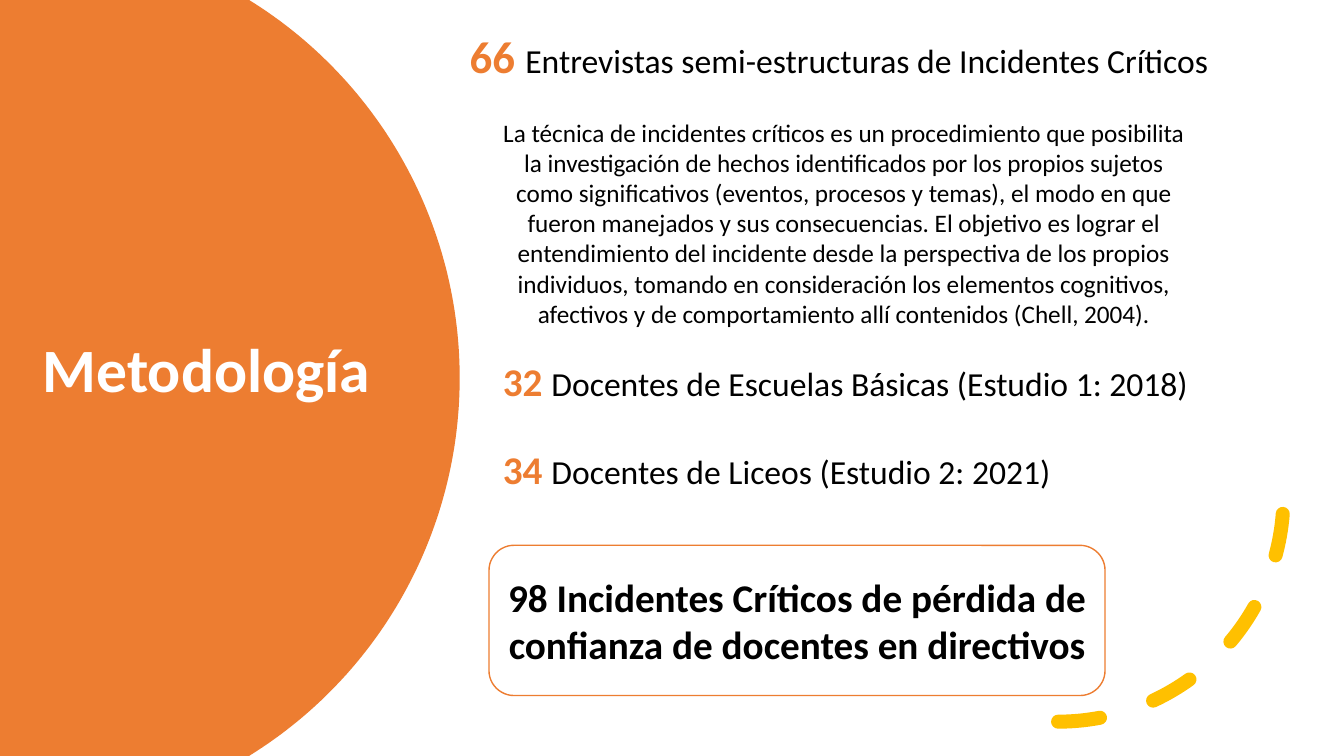
from dataclasses import dataclass
from math import asin, cos, sin

from lxml import etree
from pptx import Presentation
from pptx.dml.color import RGBColor
from pptx.enum.dml import MSO_LINE
from pptx.enum.shapes import MSO_SHAPE
from pptx.enum.text import MSO_ANCHOR, PP_ALIGN
from pptx.oxml.ns import qn
from pptx.shapes.autoshape import Shape
from pptx.slide import Slide
from pptx.util import Pt

PX = 9144  # 100 px to the inch
WIDTH, HEIGHT = 1333, 750
FONT = "Calibri"
COLORS = {"orange": "ED7D31", "gold": "FFC000", "white": "FFFFFF", "black": "000000"}

LEFT, CENTER = PP_ALIGN.LEFT, PP_ALIGN.CENTER
TOP, MIDDLE = MSO_ANCHOR.TOP, MSO_ANCHOR.MIDDLE
ARC, ROUND = MSO_SHAPE.ARC, MSO_SHAPE.ROUNDED_RECTANGLE
DASH = MSO_LINE.DASH

Box = tuple[int, int, int, int]


@dataclass
class Part:
    text: str
    size: int
    color: str = "black"
    bold: bool = False


@dataclass
class Block:
    box: Box
    lines: list[list[Part]]
    align: PP_ALIGN = LEFT
    anchor: MSO_ANCHOR = TOP
    gap: int = 0
    pitch: float = 1.0


def count(number: str, size: int, label: str) -> list[Part]:
    """Give a line that opens with a large orange number."""
    return [Part(f"{number} ", size, "orange", True), Part(label, 24)]


TITLE = Block((30, 126, 350, 488), [[Part("Metodología", 44, "white", True)]],
              CENTER, MIDDLE, pitch=0.9)
METHOD = Block((486, 111, 702, 222), [[Part(
    "La técnica de incidentes críticos es un procedimiento que posibilita la "
    "investigación de hechos identificados por los propios sujetos como "
    "significativos (eventos, procesos y temas), el modo en que fueron manejados "
    "y sus consecuencias. El objetivo es lograr el entendimiento del incidente "
    "desde la perspectiva de los propios individuos, tomando en consideración los "
    "elementos cognitivos, afectivos y de comportamiento allí contenidos "
    "(Chell, 2004).", 18)]], CENTER)
TOTAL = Block((456, 24, 755, 104), [
    count("66", 32, "Entrevistas semi-estructuras de Incidentes Críticos")])
STUDIES = Block((489, 350, 783, 145), [
    count("32", 28, "Docentes de Escuelas Básicas (Estudio 1: 2018)"),
    count("34", 28, "Docentes de Liceos (Estudio 2: 2021)")], gap=29)
RESULT = Block((485, 541, 611, 149), [[Part(
    "98 Incidentes Críticos de pérdida de confianza de docentes en directivos",
    28, "black", True)]], CENTER, MIDDLE)


def rgb(name: str) -> RGBColor:
    return RGBColor.from_string(COLORS[name])


def scale(box: Box) -> list[int]:
    return [side * PX for side in box]


def write(shape: Shape, block: Block) -> None:
    frame = shape.text_frame
    frame.word_wrap = True
    frame.vertical_anchor = block.anchor
    for row, parts in enumerate(block.lines):
        para = frame.add_paragraph() if row else frame.paragraphs[0]
        para.alignment = block.align
        para.line_spacing = block.pitch
        para.space_before = Pt(block.gap if row else 0)
        for part in parts:
            run = para.add_run()
            run.text = part.text
            font = run.font
            font.name, font.size, font.bold = FONT, Pt(part.size), part.bold
            font.color.rgb = rgb(part.color)


def add_text(slide: Slide, block: Block) -> None:
    write(slide.shapes.add_textbox(*scale(block.box)), block)


def add_disc(slide: Slide) -> None:
    """Draw the part of the large circle that lies on the slide."""
    mid_x, mid_y, radius, steps = 15, HEIGHT / 2, 441, 120
    limit = asin(mid_y / radius)
    turns = [limit * (2 * step / steps - 1) for step in range(steps + 1)]
    rim = [((mid_x + radius * cos(turn)) * PX, (mid_y + radius * sin(turn)) * PX)
           for turn in turns]
    pen = slide.shapes.build_freeform(0, 0)
    pen.add_line_segments(rim + [(0, HEIGHT * PX)], close=True)
    disc = pen.convert_to_shape()
    disc.shadow.inherit = False
    disc.fill.solid()
    disc.fill.fore_color.rgb = rgb("orange")
    disc.line.fill.background()


def add_arc(slide: Slide) -> None:
    arc = slide.shapes.add_shape(ARC, *scale((826, 269, 447, 447)))
    arc.shadow.inherit = False
    arc.fill.background()
    arc.line.color.rgb = rgb("gold")
    arc.line.width = Pt(10)
    arc.line.dash_style = DASH
    props = arc.element.spPr
    props.find(qn("a:xfrm")).set("flipV", "1")
    line = props.find(qn("a:ln"))
    line.set("cap", "rnd")
    etree.SubElement(line, qn("a:round"))


def add_result(slide: Slide) -> None:
    card = slide.shapes.add_shape(ROUND, *scale(RESULT.box))
    card.shadow.inherit = False
    card.fill.solid()
    card.fill.fore_color.rgb = rgb("white")
    card.line.color.rgb = rgb("orange")
    card.line.width = Pt(1)
    write(card, RESULT)


def main() -> None:
    deck = Presentation()
    deck.slide_width, deck.slide_height = WIDTH * PX, HEIGHT * PX
    slide = deck.slides.add_slide(deck.slide_layouts[6])
    add_disc(slide)
    add_text(slide, TITLE)
    add_arc(slide)
    for block in (METHOD, TOTAL, STUDIES):
        add_text(slide, block)
    add_result(slide)
    deck.save("out.pptx")


if __name__ == "__main__":
    main()
